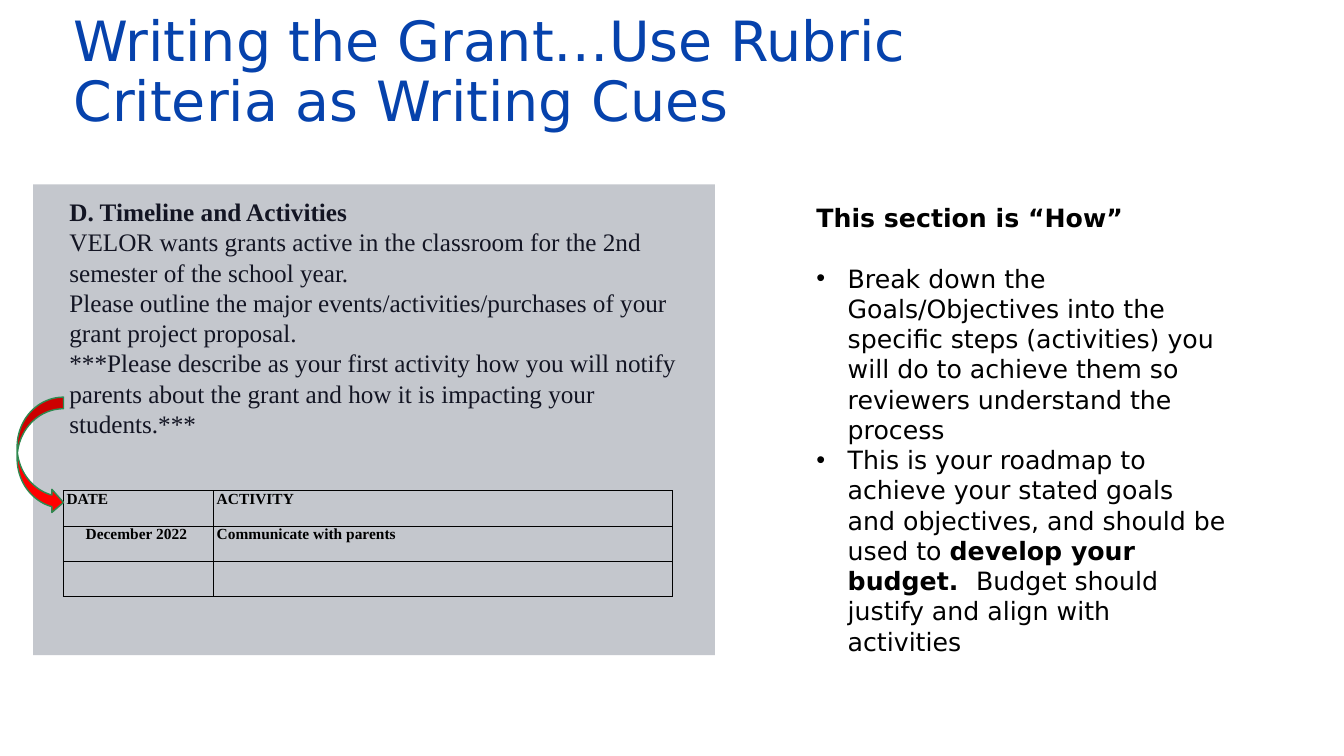
from lxml import etree
from pptx import Presentation
from pptx.dml.color import RGBColor
from pptx.enum.shapes import MSO_SHAPE
from pptx.enum.text import MSO_ANCHOR, PP_ALIGN
from pptx.oxml.ns import qn
from pptx.util import Emu, Pt

RECTANGLE = MSO_SHAPE.RECTANGLE
CURVED_ARROW = MSO_SHAPE.CURVED_RIGHT_ARROW
TOP = MSO_ANCHOR.TOP
LEFT, JUSTIFY = PP_ALIGN.LEFT, PP_ALIGN.JUSTIFY

BLUE = RGBColor(0x06, 0x42, 0xAC)
GRAY = RGBColor(0xC4, 0xC7, 0xCD)
INK = RGBColor(0x13, 0x15, 0x23)
BLACK = RGBColor(0x00, 0x00, 0x00)
RED = RGBColor(0xFF, 0x00, 0x00)
GREEN = RGBColor(0x2F, 0x89, 0x50)

SANS = "DejaVu Sans"
SERIF = "Times New Roman"
BODY_LEADING = Pt(21.6)


def px(count):
    """Convert px to EMU, at 100 px to the inch."""
    return Emu(count * 9144)


class Page:
    """Holds the text style and the slide that is being filled."""

    def __init__(self, deck):
        self.slide = deck.slides.add_slide(deck.slide_layouts[6])
        self.style(SANS, 18, BLACK)

    def style(self, font, size, color):
        self.font, self.size, self.color = font, size, color

    def span(self, para, text, bold=False):
        span = para.add_run()
        span.text = text
        span.font.name = self.font
        span.font.size = Pt(self.size)
        span.font.color.rgb = self.color
        span.font.bold = bold

    def shape(self, kind, left, top, width, height, fill, line=None):
        shape = self.slide.shapes.add_shape(
            kind, px(left), px(top), px(width), px(height))
        shape.shadow.inherit = False
        shape.fill.solid()
        shape.fill.fore_color.rgb = fill
        if line is None:
            shape.line.fill.background()
        else:
            shape.line.color.rgb = line
            shape.line.width = Pt(1)

    def text(self, left, top, width, height, paragraphs, leading):
        """Each paragraph is a list of (text, bold) pairs."""
        box = self.slide.shapes.add_textbox(
            px(left), px(top), px(width), px(height))
        frame = box.text_frame
        frame.word_wrap = True
        frame.vertical_anchor = TOP
        for index, spans in enumerate(paragraphs):
            para = frame.add_paragraph() if index else frame.paragraphs[0]
            para.alignment = LEFT
            para.line_spacing = leading
            for text, bold in spans:
                self.span(para, text, bold)
        return frame.paragraphs

    def bullet(self, para, indent):
        properties = para._p.get_or_add_pPr()
        properties.set("marL", str(px(indent)))
        properties.set("indent", str(-px(indent)))
        etree.SubElement(properties, qn("a:buFont")).set("typeface", "Arial")
        etree.SubElement(properties, qn("a:buChar")).set("char", "•")

    def border(self, cell, color):
        properties = cell._tc.get_or_add_tcPr()
        for index, side in enumerate(("a:lnL", "a:lnR", "a:lnT", "a:lnB")):
            line = etree.Element(qn(side), w=str(Pt(1)))
            fill = etree.SubElement(line, qn("a:solidFill"))
            etree.SubElement(fill, qn("a:srgbClr")).set("val", str(color))
            properties.insert(index, line)

    def table(self, left, top, columns, row_height, rows):
        """Each cell is a (text, left margin) pair."""
        table = self.slide.shapes.add_table(
            len(rows), len(columns), px(left), px(top),
            px(sum(columns)), px(row_height * len(rows))).table
        table.first_row = table.horz_banding = False
        for column, width in zip(table.columns, columns):
            column.width = px(width)
        for row, entries in zip(table.rows, rows):
            row.height = px(row_height)
            for cell, (text, margin) in zip(row.cells, entries):
                cell.margin_left, cell.margin_right = px(margin), px(3)
                cell.margin_top = cell.margin_bottom = 0
                cell.fill.background()
                self.border(cell, BLACK)
                para = cell.text_frame.paragraphs[0]
                para.alignment = JUSTIFY
                if text:
                    self.span(para, text, bold=True)


def main():
    deck = Presentation()
    deck.slide_width, deck.slide_height = px(1333), px(750)
    page = Page(deck)

    # Rubric panel
    page.shape(RECTANGLE, 33, 183, 676, 467, GRAY)

    # Title
    page.style(SANS, 39.6, BLUE)
    page.text(63, 9, 1000, 138, [
        [("Writing the Grant…Use Rubric Criteria as Writing Cues", False)],
    ], 0.9)

    # Rubric criteria
    page.style(SERIF, 18, INK)
    page.text(59, 190, 667, 313, [
        [("D. Timeline and Activities", True)],
        [("VELOR wants grants active in the classroom for the 2nd semester "
          "of the school year.", False)],
        [("Please outline the major events/activities/purchases of your "
          "grant project proposal.", False)],
        [("***Please describe as your first activity how you will notify "
          "parents about the grant and how it is impacting your "
          "students.***", False)],
    ], BODY_LEADING)

    # Advice on the section
    page.style(SANS, 18, BLACK)
    heading, *advice = page.text(800, 196, 426, 525, [
        [("This section is “How”", True)],
        [("Break down the Goals/Objectives into the specific steps "
          "(activities) you will do to achieve them so reviewers understand "
          "the process", False)],
        [("This is your roadmap to achieve your stated goals and objectives, "
          "and should be used to ", False),
         ("develop your budget.  ", True),
         ("Budget should justify and align with activities", False)],
    ], BODY_LEADING)
    heading.space_after = BODY_LEADING
    for para in advice:
        page.bullet(para, 31)

    # Timeline table
    page.style(SERIF, 11, BLACK)
    page.table(63, 487, (149, 455), 35, [
        [("DATE", 3), ("ACTIVITY", 3)],
        [("December 2022", 22), ("Communicate with parents", 3)],
        [("", 3), ("", 3)],
    ])

    # Arrow from the criteria to the table
    page.shape(CURVED_ARROW, 17, 394, 46, 116, RED, GREEN)

    deck.save("out.pptx")


if __name__ == "__main__":
    main()
